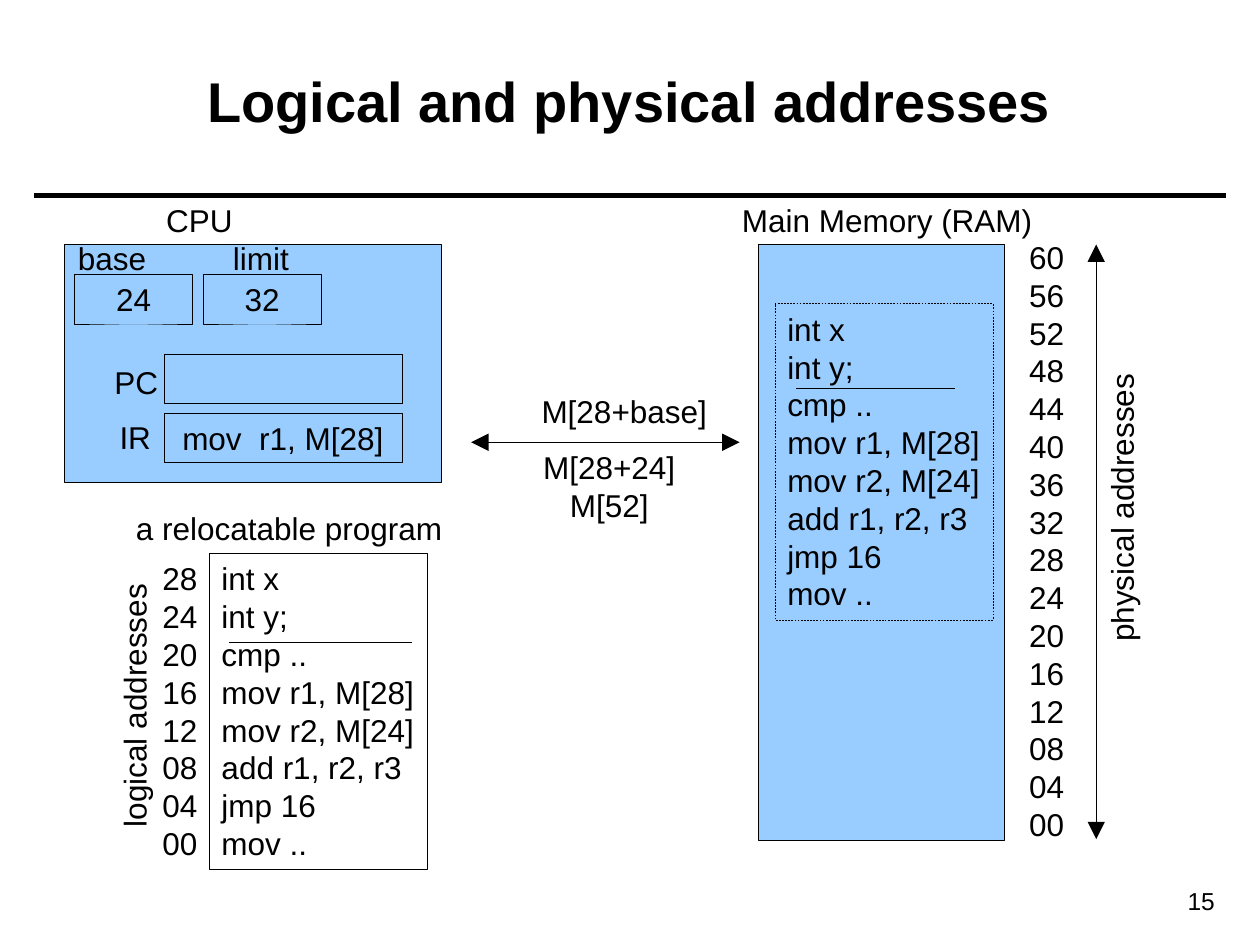
from lxml import etree
from pptx import Presentation
from pptx import util as u
from pptx.dml import color
from pptx.enum import dml, shapes, text
from pptx.oxml import ns

theme = {
    "font": "Arial",
    "ink": color.RGBColor(0, 0, 0),
    "blue": color.RGBColor(0x99, 0xCC, 0xFF),
    "title": 32, "body": 18, "page": 14,
    "lead": 21.6, "thin": 0.25, "thick": 3,
}
left, mid, right = text.PP_ALIGN.LEFT, text.PP_ALIGN.CENTER, text.PP_ALIGN.RIGHT
top, centre = text.MSO_ANCHOR.TOP, text.MSO_ANCHOR.MIDDLE

deck = Presentation()
deck.slide_width, deck.slide_height = u.Inches(10), u.Inches(7.5)
slide = deck.slides.add_slide(deck.slide_layouts[6])
col, row = deck.slide_width / 100, deck.slide_height / 75


def block(x, y, w, h, lines=(), box=False, fill=None, dash=False, size="body",
          bold=False, align=left, anchor=top, wrap=False, turn=0):
    place = [round(x * col), round(y * row), round(w * col), round(h * row)]
    if box:
        item = slide.shapes.add_shape(shapes.MSO_SHAPE.RECTANGLE, *place)
        item.shadow.inherit = False
        item.line.color.rgb = theme["ink"]
        item.line.width = u.Pt(theme["thin"])
        if dash:
            item.line.dash_style = dml.MSO_LINE.DASH
        if fill:
            item.fill.solid()
            item.fill.fore_color.rgb = fill
        else:
            item.fill.background()
    else:
        item = slide.shapes.add_textbox(*place)
    item.rotation = turn
    frame = item.text_frame
    frame.word_wrap = wrap
    frame.vertical_anchor = anchor
    for i, line in enumerate(lines):
        para = frame.add_paragraph() if i else frame.paragraphs[0]
        para.alignment = align
        if size == "body":
            para.line_spacing = u.Pt(theme["lead"])
        run = para.add_run()
        run.text = line
        run.font.name = theme["font"]
        run.font.size = u.Pt(theme[size])
        run.font.bold = bold
        run.font.color.rgb = theme["ink"]


def rule(x1, y1, x2, y2, width="thin", heads=False):
    line = slide.shapes.add_connector(
        shapes.MSO_CONNECTOR.STRAIGHT,
        round(x1 * col), round(y1 * row), round(x2 * col), round(y2 * row))
    line.line.color.rgb = theme["ink"]
    line.line.width = u.Pt(theme[width])
    if heads:
        for end in ("a:headEnd", "a:tailEnd"):
            etree.SubElement(line.line._get_or_add_ln(), ns.qn(end),
                             type="triangle", w="lg", len="lg")
    etree.SubElement(line._element.spPr, ns.qn("a:effectLst"))


rule(2.7, 15.5, 97.3, 15.5, "thick")
block(3.5, 1.7, 92.9, 12.5, ["Logical and physical addresses"], size="title",
      bold=True, align=mid, anchor=centre, wrap=True)
block(87, 69.8, 10.4, 3.4, ["15"], size="page", align=right, anchor=centre, wrap=True)

block(5.1, 19.4, 29.9, 18.9, box=True, fill=theme["blue"])
block(60.2, 19.4, 19.5, 47.3, box=True, fill=theme["blue"])

for x, y, w, name in [
    (12.2, 15.5, 7.3, "CPU"),
    (57.9, 15.5, 26, "Main Memory (RAM)"),
    (9.8, 39.9, 26.6, "a relocatable program"),
    (5.2, 18.5, 7.6, "base"),
    (17.5, 18.5, 6.7, "limit"),
    (8.1, 28.3, 5.5, "PC"),
    (8.5, 32.7, 4.5, "IR"),
    (42, 30.6, 15.3, "M[28+base]"),
]:
    block(x, y, w, 4, [name])
block(42.1, 35.1, 12.5, 7, ["M[28+24]", "M[52]"], align=mid)

for x, y, w, value in [
    (5.9, 21.8, 9.4, ["24"]),
    (16.1, 21.8, 9.4, ["32"]),
    (13, 28.1, 18.9, []),
    (13, 32.8, 18.9, ["mov  r1, M[28]"]),
]:
    block(x, y, w, 3.9, value, box=True, align=mid, anchor=centre)

code = ["int x", "int y;", "cmp ..", "mov r1, M[28]", "mov r2, M[24]",
        "add r1, r2, r3", "jmp 16", "mov .."]
for x, y, dash in [(16.6, 43.9, False), (61.5, 24.1, True)]:
    block(x, y, 17.3, 25.1, code, box=True, dash=dash, wrap=True)
rule(18.2, 51, 32.7, 51)
rule(63.2, 30.8, 75.8, 30.8)

for x, y, high in [(11.9, 43.9, 28), (80.7, 18.4, 60)]:
    marks = [f"{n:02}" for n in range(high, -1, -4)]
    block(x, y, 6.3, 1 + 3 * len(marks), marks, wrap=True)
block(0, 54, 21.3, 4, ["logical addresses"], turn=270)
block(76.5, 38.3, 25, 4, ["physical addresses"], align=mid, turn=270)

rule(87, 19.4, 87, 66.6, heads=True)
rule(37.4, 35.1, 58.7, 35.1, heads=True)

deck.save("out.pptx")
